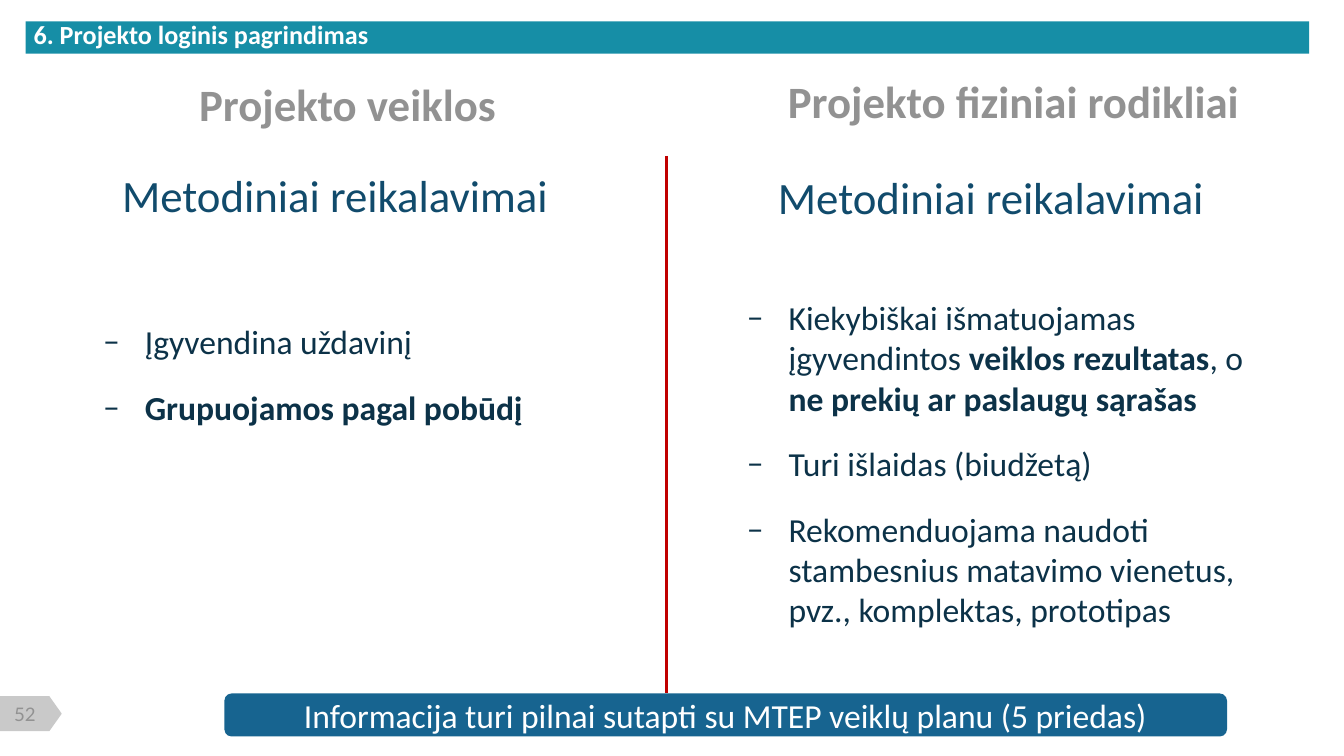
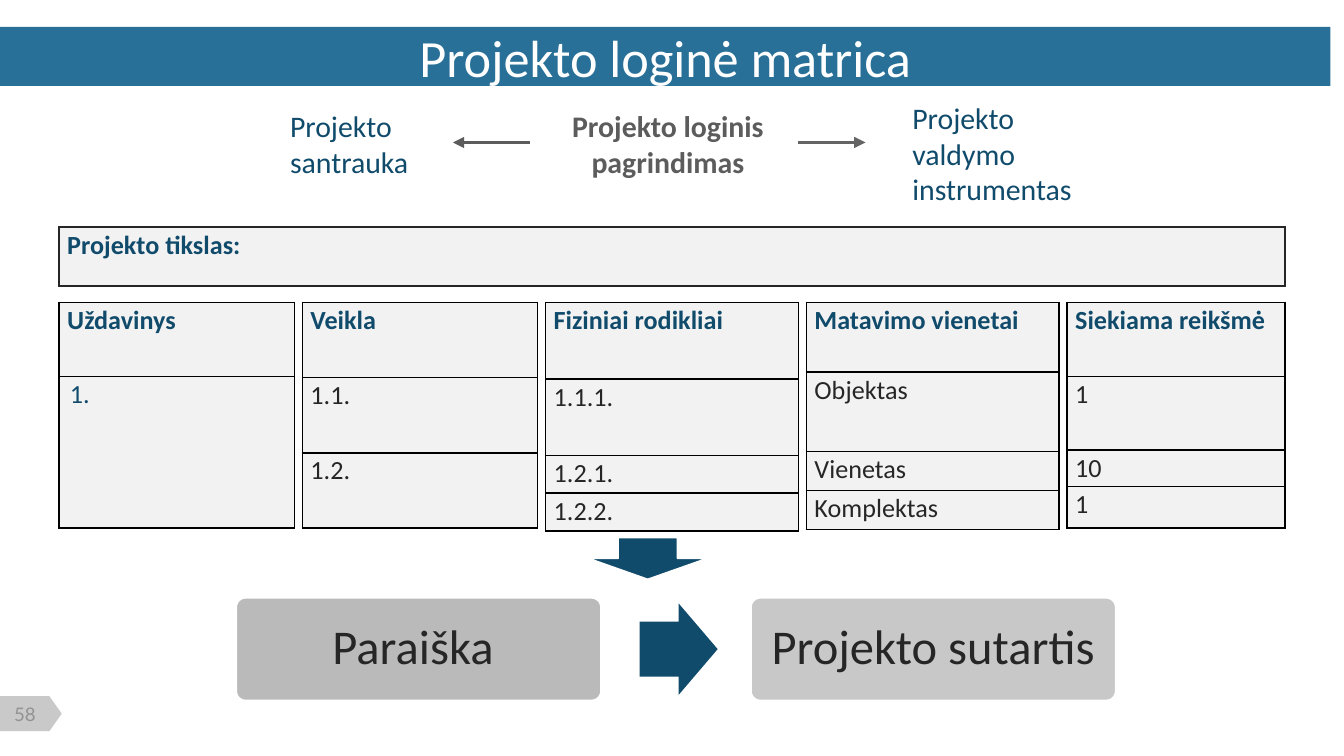
from lxml import etree
from pptx import Presentation
from pptx.dml.color import RGBColor
from pptx.enum.shapes import MSO_CONNECTOR, MSO_SHAPE
from pptx.enum.text import MSO_ANCHOR, PP_ALIGN
from pptx.oxml.ns import qn
from pptx.util import Inches, Pt

LEFT, CENTER = PP_ALIGN.LEFT, PP_ALIGN.CENTER
TOP, MIDDLE = MSO_ANCHOR.TOP, MSO_ANCHOR.MIDDLE
RECTANGLE, ROUNDED = MSO_SHAPE.RECTANGLE, MSO_SHAPE.ROUNDED_RECTANGLE
RIGHT_ARROW, DOWN_ARROW = MSO_SHAPE.RIGHT_ARROW, MSO_SHAPE.DOWN_ARROW
PAGE_TAG = MSO_SHAPE.FLOWCHART_OFFPAGE_CONNECTOR
STRAIGHT = MSO_CONNECTOR.STRAIGHT

FONT, PAGE_FONT = "Calibri", "Lato"
NAVY, DARK_NAVY, BLUE, TEAL = "114B6C", "0C3248", "176490", "168EA6"
GRAY, TAG_GRAY, ARROW_GRAY = "929292", "C9C9C9", "5C5C5C"
INK, CELL_FILL, WHITE, RED, BLACK = "262626", "F2F2F2", "FFFFFF", "C00000", "000000"

SECTION = "6. Projekto loginis pagrindimas"
REQUIREMENTS = "Metodiniai reikalavimai"
COLUMNS = [
    {
        "title": ("Projekto veiklos", (0.92, 0.52, 3.33, 0.51)),
        "subtitle": (0.81, 1.2, 3.44, 0.51),
        "body": (0.67, 2.34, 3.56, 1.33),
        "bullets": [
            "Įgyvendina uždavinį",
            [("Grupuojamos pagal pobūdį", True)],
        ],
    },
    {
        "title": ("Projekto fiziniai rodikliai", (5.58, 0.5, 3.92, 0.53)),
        "subtitle": (5.69, 1.21, 3.44, 0.51),
        "body": (5.46, 2.16, 3.9, 2.61),
        "bullets": [
            [
                ("Kiekybiškai išmatuojamas įgyvendintos ", False),
                ("veiklos rezultatas", True),
                (", o ", False),
                ("ne prekių ar paslaugų sąrašas", True),
            ],
            "Turi išlaidas (biudžetą)",
            "Rekomenduojama naudoti stambesnius matavimo vienetus, "
            "pvz., komplektas, prototipas",
        ],
    },
]
BANNER = "Informacija turi pilnai sutapti su MTEP veiklų planu (5 priedas)"

MATRIX_TITLE = "Projekto loginė matrica"
GOAL = "Projekto tikslas:"
MATRIX = [
    (1.75, ["Uždavinys", "1."], [0.55, 1.13]),
    (1.75, ["Veikla", "1.1.", "1.2."], [0.56, 0.56, 0.56]),
    (1.88, ["Fiziniai rodikliai", "1.1.1.", "1.2.1.", "1.2.2."], [0.57, 0.57, 0.28, 0.28]),
    (1.88, ["Matavimo vienetai", "Objektas", "Vienetas", "Komplektas"], [0.52, 0.59, 0.29, 0.29]),
    (1.62, ["Siekiama reikšmė", "1", "10", "1"], [0.55, 0.55, 0.27, 0.31]),
]
MATRIX_LEFT, MATRIX_TOP, MATRIX_GAP = 0.44, 2.25, 0.06
STEPS = [("Paraiška ", 1.75, 63), ("Projekto sutartis ", 5.58, 50)]


def color(value):
    return RGBColor.from_string(value)


def inches(values):
    return [Inches(value) for value in values]


def add_run(paragraph, text, size, ink, bold, font=FONT):
    run = paragraph.add_run()
    run.text = text
    run.font.name = font
    run.font.size = Pt(size)
    run.font.bold = bold
    run.font.color.rgb = color(ink)


def write(frame, paragraphs, size=18, ink=INK, bold=False, font=FONT, align=LEFT,
          anchor=TOP, insets=(0.1, 0.05, 0.1, 0.05), after=0, spacing=None, bullet=None):
    frame.word_wrap = True
    frame.vertical_anchor = anchor
    (frame.margin_left, frame.margin_top,
     frame.margin_right, frame.margin_bottom) = inches(insets)
    if isinstance(paragraphs, str):
        paragraphs = [paragraphs]
    for index, content in enumerate(paragraphs):
        paragraph = frame.add_paragraph() if index else frame.paragraphs[0]
        paragraph.alignment = align
        paragraph.space_after = Pt(after)
        if spacing:
            paragraph.line_spacing = spacing
        if bullet:
            properties = paragraph._p.get_or_add_pPr()
            properties.set("marL", str(Inches(0.31)))
            properties.set("indent", str(-Inches(0.31)))
            etree.SubElement(properties, qn("a:buFont")).set("typeface", font)
            etree.SubElement(properties, qn("a:buChar")).set("char", bullet)
        runs = [(content, bold)] if isinstance(content, str) else content
        for text, strong in runs:
            add_run(paragraph, text, size, ink, strong, font)


def add_text(slide, box, paragraphs, **style):
    write(slide.shapes.add_textbox(*inches(box)).text_frame, paragraphs, **style)


def add_box(slide, kind, box, fill, line=None, width=2, opacity=None, adjust=()):
    shape = slide.shapes.add_shape(kind, *inches(box))
    shape.shadow.inherit = False
    shape.fill.solid()
    shape.fill.fore_color.rgb = color(fill)
    if opacity:
        tint = shape._element.spPr.find(f"{qn('a:solidFill')}/{qn('a:srgbClr')}")
        etree.SubElement(tint, qn("a:alpha")).set("val", str(opacity * 1000))
    if line:
        shape.line.color.rgb = color(line)
        shape.line.width = Pt(width)
    else:
        shape.line.fill.background()
    for index, value in enumerate(adjust):
        shape.adjustments[index] = value
    return shape


def add_line(slide, start, end, ink, arrow=False):
    connector = slide.shapes.add_connector(STRAIGHT, *inches(start + end))
    connector.line.color.rgb = color(ink)
    connector.line.width = Pt(2)
    properties = connector._element.spPr
    if arrow:
        outline = properties.find(qn("a:ln"))
        etree.SubElement(outline, qn("a:tailEnd")).set("type", "triangle")
    etree.SubElement(properties, qn("a:effectLst"))
    return connector


def add_border(cell, ink):
    properties = cell._tc.get_or_add_tcPr()
    for side in ("lnL", "lnR", "lnT", "lnB"):
        border = etree.SubElement(properties, qn(f"a:{side}"), w=str(Pt(1)))
        fill = etree.SubElement(border, qn("a:solidFill"))
        etree.SubElement(fill, qn("a:srgbClr")).set("val", ink)


def add_matrix_column(slide, left, top, width, texts, heights, border=BLACK):
    frame = slide.shapes.add_table(
        len(texts), 1, *inches((left, top, width, sum(heights))))
    table = frame.table
    table.first_row = table.horz_banding = False
    table.columns[0].width = Inches(width)
    for index, (text, height) in enumerate(zip(texts, heights)):
        table.rows[index].height = Inches(height)
        cell = table.cell(index, 0)
        add_border(cell, border)
        cell.fill.solid()
        cell.fill.fore_color.rgb = color(CELL_FILL)
        is_task = text == "1."
        is_header = index == 0
        cell.margin_left = Inches(0.08 if is_task else 0.06)
        cell.margin_right = Inches(0.06)
        cell.margin_top = cell.margin_bottom = 0
        paragraph = cell.text_frame.paragraphs[0]
        paragraph.line_spacing = 1.07
        add_run(paragraph, text, 14, NAVY if is_header or is_task else INK, is_header)


def add_slide(presentation, number):
    slide = presentation.slides.add_slide(presentation.slide_layouts[6])
    tag = add_box(slide, PAGE_TAG, (0.1, 5.08, 0.26, 0.46), TAG_GRAY)
    tag.rotation = 270
    add_text(slide, (0.02, 5.23, 0.33, 0.17), number, size=10, ink=GRAY,
             font=PAGE_FONT, align=CENTER, anchor=MIDDLE, insets=(0, 0, 0, 0))
    return slide


def build_requirements(presentation):
    slide = add_slide(presentation, "52")
    add_line(slide, (4.96, 1.16), (4.96, 5.16), RED)
    for column in COLUMNS:
        title, box = column["title"]
        add_text(slide, box, title, size=24, ink=GRAY, bold=True, align=CENTER)
        add_text(slide, column["subtitle"], REQUIREMENTS, size=24, ink=NAVY)
        add_text(slide, column["body"], column["bullets"], ink=DARK_NAVY,
                 after=13.5, bullet="–")
    add_box(slide, RECTANGLE, (0.19, 0.16, 9.55, 0.24), TEAL)
    add_text(slide, (0.25, 0.13, 5.51, 0.24), SECTION, size=14, ink=WHITE,
             bold=True, anchor=MIDDLE, insets=(0, 0, 0, 0))
    banner = add_box(slide, ROUNDED, (1.67, 5.16, 7.46, 0.32), BLUE)
    write(banner.text_frame, BANNER, ink=WHITE, align=CENTER, anchor=MIDDLE)


def build_matrix(presentation):
    slide = add_slide(presentation, "58")
    add_text(slide, (4, 0.75, 1.94, 0.47), "Projekto loginis pagrindimas",
             size=16, ink=ARROW_GRAY, bold=True, align=CENTER)
    summary = add_box(slide, RECTANGLE, (2.06, 0.75, 1.31, 0.62), WHITE, line=WHITE)
    write(summary.text_frame, "Projekto santrauka", size=16, ink=NAVY)
    add_text(slide, (6.69, 0.69, 1.69, 0.91), "Projekto valdymo instrumentas",
             size=16, ink=NAVY)
    to_summary = add_line(slide, (3.94, 1.06), (3.37, 1.06), ARROW_GRAY, arrow=True)
    to_summary.end_connect(summary, 3)
    add_line(slide, (5.94, 1.06), (6.44, 1.06), "646464", arrow=True)

    add_matrix_column(slide, MATRIX_LEFT, 1.69, 9.12, [GOAL], [0.44], border=INK)
    left = MATRIX_LEFT
    for width, texts, heights in MATRIX:
        add_matrix_column(slide, left, MATRIX_TOP, width, texts, heights)
        left += width + MATRIX_GAP

    for text, left, opacity in STEPS:
        step = add_box(slide, ROUNDED, (left, 4.44, 2.73, 0.78), GRAY, line=WHITE,
                       opacity=opacity, adjust=[0.1])
        write(step.text_frame, text, size=26, align=CENTER, anchor=MIDDLE,
              insets=(0.11, 0.11, 0.11, 0.11), spacing=0.9)
    add_box(slide, RIGHT_ARROW, (4.76, 4.49, 0.58, 0.68), NAVY, adjust=[0.6, 0.5])
    add_box(slide, DOWN_ARROW, (4.38, 4, 0.88, 0.31), NAVY, line=WHITE, width=0.75)
    band = add_box(slide, RECTANGLE, (0, 0.2, 9.9, 0.44), BLUE, opacity=92)
    write(band.text_frame, MATRIX_TITLE, size=28, ink=WHITE, align=CENTER,
          anchor=MIDDLE, insets=(0.2, 0.2, 0.2, 0.2))


def main():
    presentation = Presentation()
    presentation.slide_width = Inches(10)
    presentation.slide_height = Inches(10 * 9 / 16)
    build_requirements(presentation)
    build_matrix(presentation)
    presentation.save("out.pptx")


if __name__ == "__main__":
    main()
